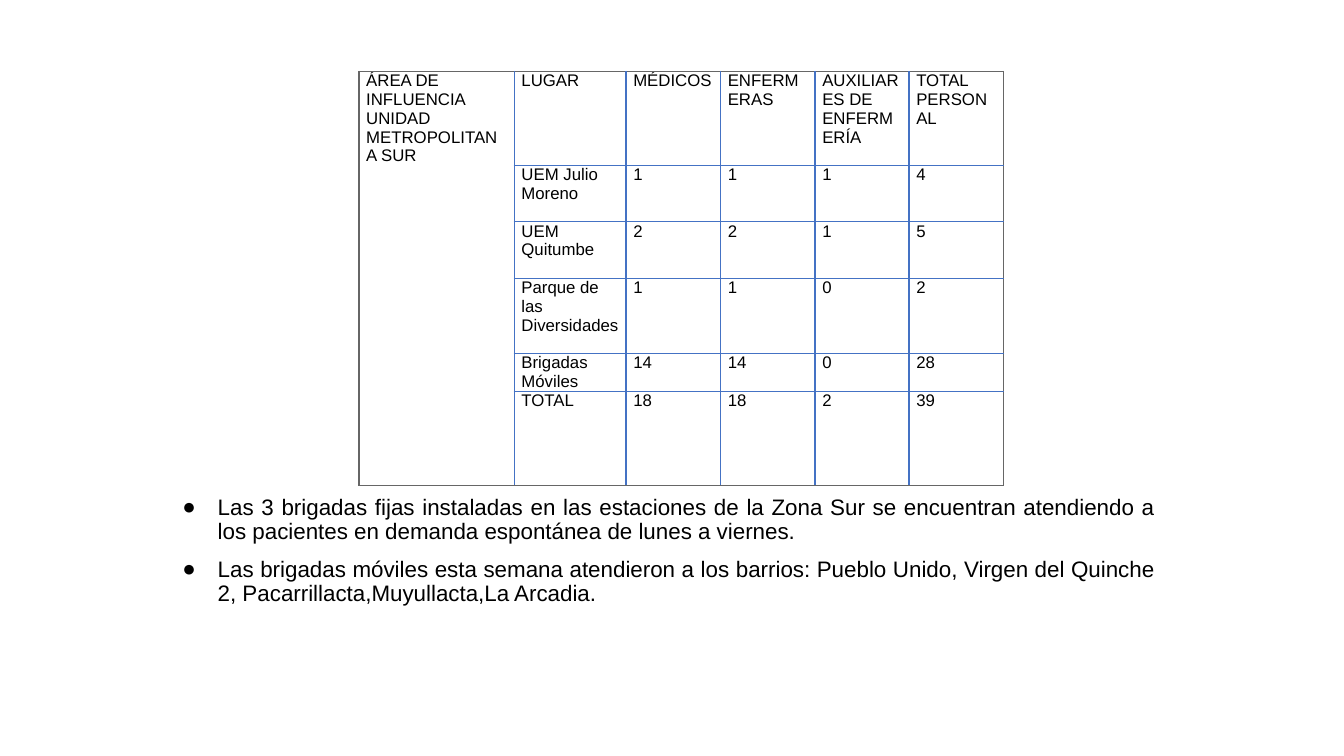
import lxml.etree
import pptx
import pptx.dml.color
import pptx.enum.text
import pptx.oxml.ns
import pptx.util

Pt = pptx.util.Pt
qn = pptx.oxml.ns.qn
COLORS = {"text": "000000", "grid": "4472C4", "frame": "666666"}


def write_text(paragraph, text, size=12, align=pptx.enum.text.PP_ALIGN.LEFT, spacing=1.0, before=0):
    paragraph.alignment = align
    paragraph.line_spacing = spacing
    paragraph.space_before = Pt(before)
    run = paragraph.add_run()
    run.text = text
    run.font.size = Pt(size)
    run.font.name = "Arial"
    run.font.bold = False
    run.font.color.rgb = pptx.dml.color.RGBColor.from_string(COLORS["text"])


def add_border(cell, side, color):
    """Draw a 1 pt line on one side of a cell: L, R, T or B."""
    line = lxml.etree.SubElement(cell._tc.get_or_add_tcPr(), qn(f"a:ln{side}"), w=str(Pt(1)))
    fill = lxml.etree.SubElement(line, qn("a:solidFill"))
    lxml.etree.SubElement(fill, qn("a:srgbClr"), val=color)


presentation = pptx.Presentation()
presentation.slide_width = Pt(960)
presentation.slide_height = Pt(540)
slide = presentation.slides.add_slide(presentation.slide_layouts[0])
title = slide.shapes.title
title.element.getparent().remove(title.element)

# Bulleted notes
notes = [
    "Las 3 brigadas fijas instaladas en las estaciones de la Zona Sur se encuentran "
    "atendiendo a los pacientes en demanda espontánea de lunes a viernes.",
    "Las brigadas móviles esta semana atendieron a los barrios: Pueblo Unido, "
    "Virgen del Quinche 2, Pacarrillacta,Muyullacta,La Arcadia.",
]
subtitle = slide.placeholders[1]
subtitle.left, subtitle.top, subtitle.width, subtitle.height = Pt(112.3), Pt(350.6), Pt(720), Pt(130.3)
frame = subtitle.text_frame
frame.word_wrap = True
frame.auto_size = pptx.enum.text.MSO_AUTO_SIZE.NONE
frame.vertical_anchor = pptx.enum.text.MSO_ANCHOR.TOP
for index, note in enumerate(notes):
    paragraph = frame.add_paragraph() if index else frame.paragraphs[0]
    write_text(paragraph, note, size=16, align=pptx.enum.text.PP_ALIGN.JUSTIFY,
               spacing=0.9, before=10 * index)
    properties = paragraph._p.get_or_add_pPr()
    properties.set("marL", str(Pt(36)))
    properties.set("indent", str(Pt(-25.2)))
    lxml.etree.SubElement(properties, qn("a:buFont"), typeface="Arial")
    lxml.etree.SubElement(properties, qn("a:buChar"), char="●")

# Staff table
area = "ÁREA DE INFLUENCIA UNIDAD METROPOLITANA SUR"
staff = [
    [area, "LUGAR", "MÉDICOS", "ENFERMERAS", "AUXILIARES DE ENFERMERÍA", "TOTAL PERSONAL"],
    ["", "UEM Julio Moreno", "1", "1", "1", "4"],
    ["", "UEM Quitumbe", "2", "2", "1", "5"],
    ["", "Parque de las Diversidades", "1", "1", "0", "2"],
    ["", "Brigadas Móviles", "14", "14", "0", "28"],
    ["", "TOTAL", "18", "18", "2", "39"],
]
column_widths = [110.9, 79.9, 67.5, 67.5, 67.2, 67.2]
row_heights = [67.2, 40.3, 40.3, 53.7, 27, 67.2]
last_row, last_column = len(row_heights) - 1, len(column_widths) - 1
table = slide.shapes.add_table(
    len(row_heights), len(column_widths), Pt(256.4), Pt(51),
    Pt(sum(column_widths)), Pt(sum(row_heights)),
).table
table.first_row = False
table.horz_banding = False
for column, width in zip(table.columns, column_widths):
    column.width = Pt(width)
for row, height in zip(table.rows, row_heights):
    row.height = Pt(height)
table.cell(0, 0).merge(table.cell(last_row, 0))

for row_index, values in enumerate(staff):
    for column_index, value in enumerate(values):
        cell = table.cell(row_index, column_index)
        cell.margin_left = cell.margin_right = Pt(5.2)
        cell.margin_top = cell.margin_bottom = Pt(0)
        outer_sides = {"L": column_index == 0, "R": column_index == last_column,
                       "T": row_index == 0, "B": row_index == last_row or column_index == 0}
        for side, is_outer in outer_sides.items():
            add_border(cell, side, COLORS["frame" if is_outer else "grid"])
        cell.fill.background()
        if value:
            write_text(cell.text_frame.paragraphs[0], value)

presentation.save("out.pptx")
